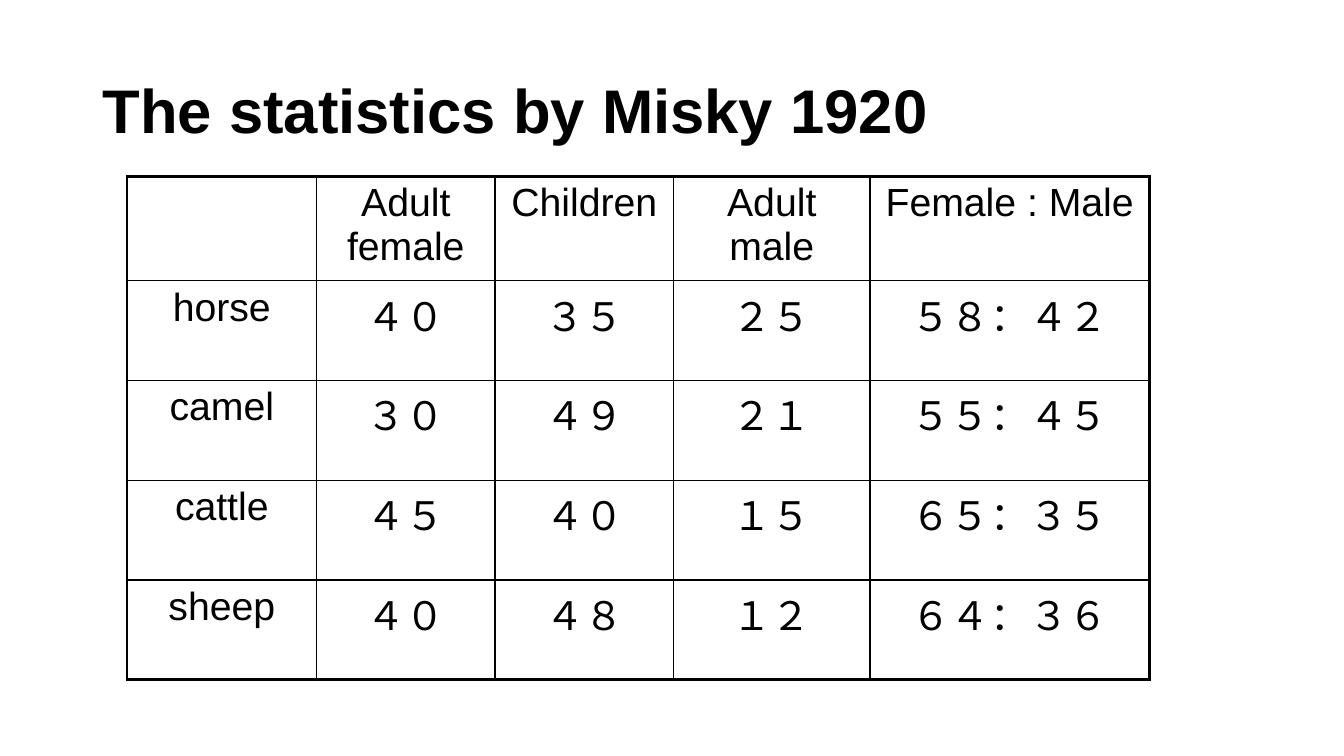
"""Build a slide with a table of livestock statistics."""
from lxml.etree import SubElement
from pptx import Presentation
from pptx.dml.color import RGBColor
from pptx.enum.text import MSO_ANCHOR as Anchor, PP_ALIGN as Align
from pptx.oxml.ns import qn
from pptx.util import Inches, Pt

BLACK = "000000"
COLUMN_WIDTHS = [1.88, 1.77, 1.77, 1.95, 2.77]
ROW_HEIGHT = 0.99
STATISTICS = [
    ["", "Adult female", "Children", "Adult male", "Female : Male"],
    ["horse", "４０", "３５", "２５", "５８：４２"],
    ["camel", "３０", "４９", "２１", "５５：４５"],
    ["cattle", "４５", "４０", "１５", "６５：３５"],
    ["sheep", "４０", "４８", "１２", "６４：３６"],
]


def write(frame, text, size=28, bold=False, align=Align.CENTER, spacing=1.0):
    para = frame.paragraphs[0]
    para.alignment = align
    para.line_spacing = spacing
    para.font.size = Pt(size)
    if text:
        span = para.add_run()
        span.text = text
        span.font.name = "Arial"
        span.font.size = Pt(size)
        span.font.bold = bold
        span.font.color.rgb = RGBColor.from_string(BLACK)


def add_border(cell, side, points):
    line = SubElement(cell._tc.get_or_add_tcPr(), qn(f"a:ln{side}"), w=str(Pt(points)))
    fill = SubElement(line, qn("a:solidFill"))
    SubElement(fill, qn("a:srgbClr"), val=BLACK)


deck = Presentation()
deck.slide_width = Inches(13.33)
deck.slide_height = Inches(7.5)
page = deck.slides.add_slide(deck.slide_layouts[6])

title = page.shapes.add_textbox(Inches(0.92), Inches(0.4), Inches(11.5), Inches(1.45))
title.text_frame.word_wrap = True
title.text_frame.vertical_anchor = Anchor.MIDDLE
write(title.text_frame, "The statistics by Misky 1920", size=44, bold=True,
      align=Align.LEFT, spacing=0.9)

row_count, column_count = len(STATISTICS), len(COLUMN_WIDTHS)
table = page.shapes.add_table(
    row_count, column_count, Inches(1.26), Inches(1.75),
    Inches(sum(COLUMN_WIDTHS)), Inches(ROW_HEIGHT * row_count)).table
table.first_row = False
table.horz_banding = False
for column, width in zip(table.columns, COLUMN_WIDTHS):
    column.width = Inches(width)

for row_index, values in enumerate(STATISTICS):
    table.rows[row_index].height = Inches(ROW_HEIGHT)
    for column_index, value in enumerate(values):
        cell = table.cell(row_index, column_index)
        write(cell.text_frame, value)
        outer_sides = {
            "L": column_index == 0,
            "R": column_index == column_count - 1,
            "T": row_index == 0,
            "B": row_index == row_count - 1,
        }
        for side, is_outer in outer_sides.items():
            add_border(cell, side, 2.25 if is_outer else 1)
        cell.fill.background()

deck.save("out.pptx")
